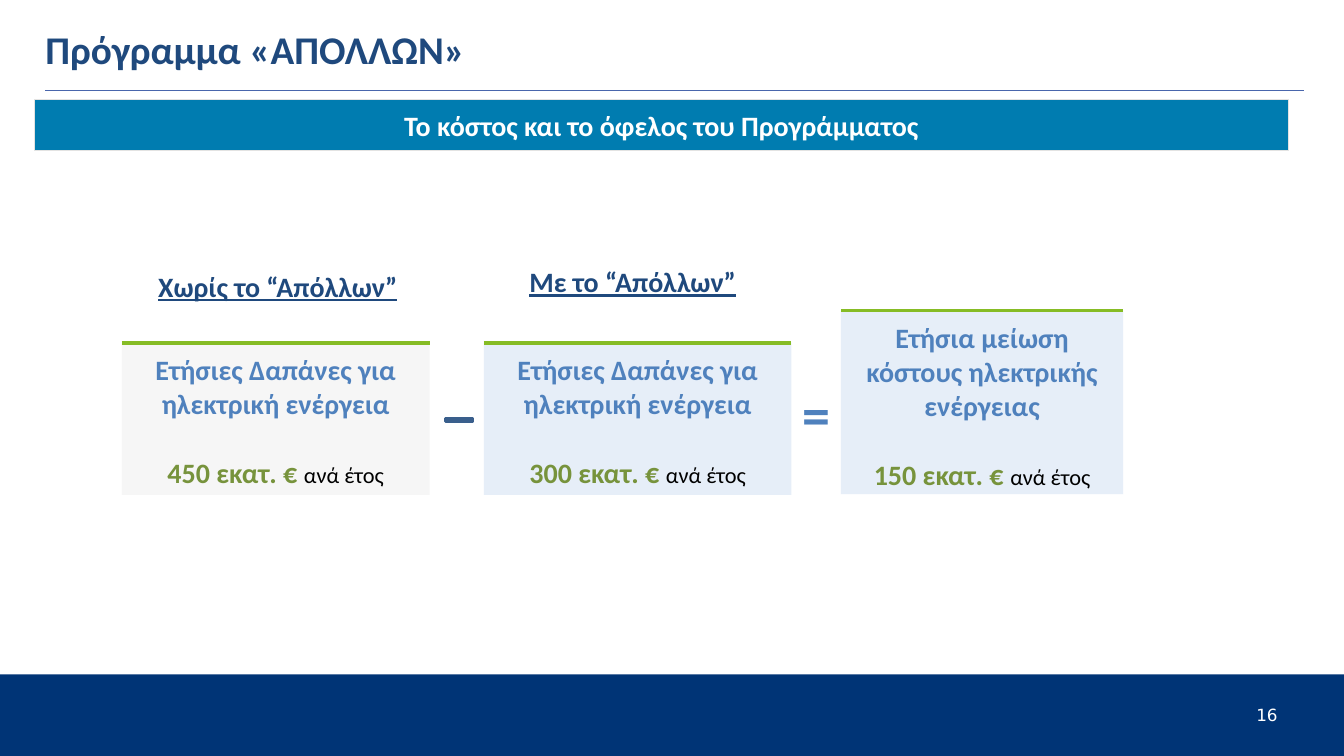
"""Builds the slide on the cost and benefit of the Apollon programme."""
import dataclasses

import lxml.etree
import pptx
import pptx.dml.color
import pptx.enum.shapes
import pptx.enum.text
import pptx.oxml.ns
import pptx.util

Inches = pptx.util.Inches
Pt = pptx.util.Pt
Align = pptx.enum.text.PP_ALIGN
Anchor = pptx.enum.text.MSO_ANCHOR
Shape = pptx.enum.shapes.MSO_SHAPE
qn = pptx.oxml.ns.qn


@dataclasses.dataclass(frozen=True)
class Theme:
    """Colours, fonts and type sizes of the slide."""
    font: str = "Calibri"
    number_font: str = "DejaVu Sans"
    navy: str = "1F497D"
    footer: str = "003476"
    rule: str = "4966AC"
    banner: str = "007CB0"
    banner_edge: str = "E3E3E2"
    blue: str = "4F81BD"
    minus_edge: str = "3A5F8C"
    amount: str = "77933C"
    accent: str = "86BC25"
    grey_tint: str = "D9D9D9"
    blue_tint: str = "8EB4E3"
    white: str = "FFFFFF"
    black: str = "000000"
    tint_alpha: int = 22000
    title_size: int = 28
    body_size: int = 20
    unit_size: int = 16
    sign_size: int = 40
    number_size: int = 12


def rgb(colour):
    """Return a colour object for a hex value."""
    return pptx.dml.color.RGBColor.from_string(colour)


class Builder:
    """Holds the theme and the current page and draws each kind of element."""

    def __init__(self, theme, page):
        """Keep the theme and the page."""
        self.theme = theme
        self.page = page

    def style(self, span, size, colour, bold=True, underline=None, font=None):
        """Format one run."""
        span.font.name = font or self.theme.font
        span.font.size = Pt(size)
        span.font.bold = bold
        span.font.underline = underline
        span.font.color.rgb = rgb(colour)

    def shape(self, kind, place, fill, edge=None, width=0.75):
        """Add a filled preset shape."""
        shape = self.page.shapes.add_shape(kind, *map(Inches, place))
        shape.shadow.inherit = False
        shape.fill.solid()
        shape.fill.fore_color.rgb = rgb(fill)
        if edge:
            shape.line.color.rgb = rgb(edge)
            shape.line.width = Pt(width)
        else:
            shape.line.fill.background()
        return shape

    def label(self, shape, text, size, colour, align=Align.CENTER,
              anchor=Anchor.TOP, inset=None, **look):
        """Put one styled paragraph in a shape."""
        frame = shape.text_frame
        frame.word_wrap = True
        frame.vertical_anchor = anchor
        if inset is not None:
            frame.margin_left = frame.margin_right = Inches(inset)
            frame.margin_top = frame.margin_bottom = Inches(inset)
        frame.text = text
        para = frame.paragraphs[0]
        para.alignment = align
        self.style(para.runs[0], size, colour, **look)
        return para

    def text(self, place, *content, **look):
        """Add a text box with one paragraph."""
        box = self.page.shapes.add_textbox(*map(Inches, place))
        return self.label(box, *content, **look)

    def rule(self, left, top, right, colour, width):
        """Add a horizontal line."""
        line = self.page.shapes.add_connector(
            pptx.enum.shapes.MSO_CONNECTOR.STRAIGHT,
            Inches(left), Inches(top), Inches(right), Inches(top))
        line.line.color.rgb = rgb(colour)
        line.line.width = Pt(width)
        properties = line._element.find(qn("p:spPr"))
        lxml.etree.SubElement(properties, qn("a:effectLst"))

    def card(self, place, caption, amount, tint):
        """Add a one-cell table with a caption and a yearly amount."""
        theme = self.theme
        table = self.page.shapes.add_table(1, 1, *map(Inches, place)).table
        table.first_row = table.horz_banding = False
        cell = table.cell(0, 0)
        cell.margin_left = cell.margin_right = Inches(0.08)
        cell.margin_top = Inches(0.11)
        cell.margin_bottom = Inches(0.04)
        cell.fill.solid()
        cell.fill.fore_color.rgb = rgb(tint)
        properties = cell._tc.get_or_add_tcPr()
        colour = properties.find(qn("a:solidFill"))[0]
        lxml.etree.SubElement(colour, qn("a:alpha"), val=str(theme.tint_alpha))
        for index, side in enumerate(("lnL", "lnR", "lnT", "lnB")):
            border = lxml.etree.Element(qn(f"a:{side}"))
            if side == "lnT":
                border.set("w", str(Pt(3)))
                fill = lxml.etree.SubElement(border, qn("a:solidFill"))
                lxml.etree.SubElement(fill, qn("a:srgbClr"), val=theme.accent)
            else:
                lxml.etree.SubElement(border, qn("a:noFill"))
            properties.insert(index, border)
        cell.text_frame.text = f"{caption}\n{amount} "
        heading, total = cell.text_frame.paragraphs
        heading.alignment = total.alignment = Align.CENTER
        total.space_before = Pt(24.4)
        self.style(heading.runs[0], theme.body_size, theme.blue)
        self.style(total.runs[0], theme.body_size, theme.amount)
        unit = total.add_run()
        unit.text = "ανά έτος"
        self.style(unit, theme.unit_size, theme.black, bold=False)


def main():
    """Build and save the deck."""
    theme = Theme()
    deck = pptx.Presentation()
    deck.slide_width, deck.slide_height = Inches(13.33), Inches(7.5)
    builder = Builder(theme, deck.slides.add_slide(deck.slide_layouts[6]))

    builder.shape(Shape.RECTANGLE, (0, 6.69, 13.33, 0.81), theme.footer)
    builder.rule(0.45, 0.9, 12.93, theme.rule, 0.96)
    builder.text((0.45, 0.19, 12.44, 0.58), "Πρόγραμμα «ΑΠΟΛΛΩΝ»",
                 theme.title_size, theme.navy, align=Align.LEFT,
                 anchor=Anchor.MIDDLE, inset=0)
    banner = builder.shape(Shape.RECTANGLE, (0.34, 0.99, 12.44, 0.5),
                           theme.banner, theme.banner_edge)
    builder.label(banner, "Το κόστος και το όφελος του Προγράμματος",
                  theme.body_size, theme.white, anchor=Anchor.MIDDLE, inset=0.08)

    spending = "Ετήσιες Δαπάνες για ηλεκτρική ενέργεια"
    saving = "Ετήσια μείωση κόστους ηλεκτρικής ενέργειας"
    for place, caption, amount, tint in (
            ((1.21, 3.4, 3.05, 1.51), spending, "450 εκατ. €", theme.grey_tint),
            ((4.8, 3.4, 3.05, 1.51), spending, "300 εκατ. €", theme.blue_tint),
            ((8.34, 3.08, 2.8, 1.82), saving, "150 εκατ. €", theme.blue_tint)):
        builder.card(place, caption, amount, tint)

    for left, top, heading in ((1.32, 2.62, "Χωρίς το “Απόλλων”"),
                               (4.84, 2.58, "Με το “Απόλλων”")):
        builder.text((left, top, 2.87, 0.44), heading, theme.body_size,
                     theme.navy, underline=True)
    builder.shape(Shape.MATH_MINUS, (4.37, 4.1, 0.37, 0.13), theme.blue,
                  theme.minus_edge, 2)
    builder.text((7.84, 3.72, 0.52, 0.77), "=", theme.sign_size, theme.blue)
    number = builder.text((12.42, 7.02, 0.46, 0.14), "16", theme.number_size,
                          theme.white, align=Align.LEFT, inset=0, bold=False,
                          font=theme.number_font)
    number.line_spacing = 0.87
    number._p.get_or_add_pPr().set("marL", str(Inches(0.04)))

    deck.save("out.pptx")


if __name__ == "__main__":
    main()
